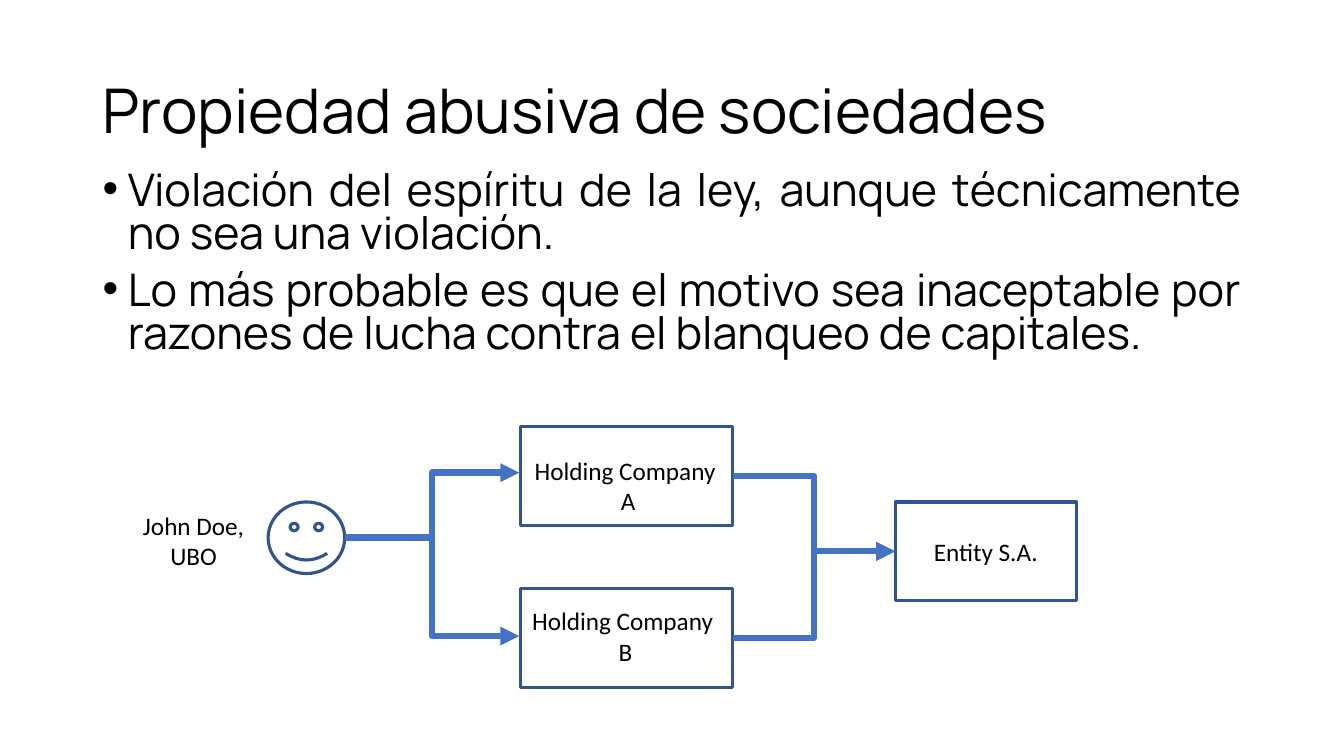
from lxml import etree
from pptx import Presentation
from pptx import util as u
from pptx.dml.color import RGBColor
from pptx.enum import shapes, text
from pptx.oxml import ns

BLACK = RGBColor(0x00, 0x00, 0x00)
OUTLINE = RGBColor(0x32, 0x54, 0x91)
ARROW = RGBColor(0x44, 0x72, 0xC4)

deck = Presentation()
deck.slide_width = u.Inches(13.33)
deck.slide_height = u.Inches(7.5)
page = deck.slides.add_slide(deck.slide_layouts[6])


def share(x, y):
    return int(deck.slide_width * x / 100), int(deck.slide_height * y / 100)


def add_text(left, top, width, height, lines, size, font, align, wrap=True):
    box = page.shapes.add_textbox(*share(left, top), *share(width, height))
    frame = box.text_frame
    frame.word_wrap = wrap
    for index, line in enumerate(lines):
        para = frame.paragraphs[0] if index == 0 else frame.add_paragraph()
        para.alignment = align
        span = para.add_run()
        span.text = line
        span.font.size = u.Pt(size)
        span.font.name = font
        span.font.color.rgb = BLACK
    return frame


title = add_text(6.9, 5.33, 86.25, 19.33, ["Propiedad abusiva de sociedades"],
                 44, "Manrope", text.PP_ALIGN.LEFT)
title.vertical_anchor = text.MSO_ANCHOR.MIDDLE
title.paragraphs[0].line_spacing = 0.9

points = [
    "Violación del espíritu de la ley, aunque técnicamente no sea una violación.",
    "Lo más probable es que el motivo sea inaceptable por razones de lucha "
    "contra el blanqueo de capitales.",
]
body = add_text(6.9, 22.13, 86.25, 33.87, points, 32, "Manrope", text.PP_ALIGN.JUSTIFY)
for para in body.paragraphs:
    para.line_spacing = 0.8
    para.space_before = u.Pt(10)
    settings = para._p.get_or_add_pPr()
    settings.set("marL", str(u.Inches(0.25)))
    settings.set("indent", str(u.Inches(-0.25)))
    etree.SubElement(settings, ns.qn("a:buFont")).set("typeface", "Arial")
    etree.SubElement(settings, ns.qn("a:buChar")).set("char", "•")

RECTANGLE = shapes.MSO_SHAPE.RECTANGLE
figures = [
    (RECTANGLE, 38.7, 56.4, 15.83, 13.07),
    (RECTANGLE, 38.7, 77.87, 15.83, 13.07),
    (RECTANGLE, 66.6, 66.4, 13.5, 13.07),
    (shapes.MSO_SHAPE.SMILEY_FACE, 19.95, 66.4, 5.7, 9.47),
]
for kind, left, top, width, height in figures:
    figure = page.shapes.add_shape(kind, *share(left, top), *share(width, height))
    figure.shadow.inherit = False
    figure.fill.background()
    figure.line.color.rgb = OUTLINE
    figure.line.width = u.Pt(2.25)

labels = [
    (38.93, 59.6, 15.6, 9.47, ["Holding Company ", "A"], False),
    (9.83, 66.8, 9.15, 9.47, ["John Doe,", "UBO"], False),
    (38.63, 79.47, 15.83, 9.47, ["Holding Company ", "B"], True),
    (68.7, 70.27, 9.3, 5.33, ["Entity S.A."], False),
]
for left, top, width, height, lines, wrap in labels:
    add_text(left, top, width, height, lines, 18, "Calibri", text.PP_ALIGN.CENTER, wrap)

owner, entity = (25.65, 71.13), (66.6, 72.93)
links = [
    ((54.53, 62.93), entity),
    (owner, (38.63, 84.13)),
    (owner, (38.63, 62.53)),
    ((54.53, 84.4), entity),
]
for start, end in links:
    link = page.shapes.add_connector(shapes.MSO_CONNECTOR.ELBOW, *share(*start), *share(*end))
    link.line.color.rgb = ARROW
    link.line.width = u.Pt(4.5)
    etree.SubElement(link.line._get_or_add_ln(), ns.qn("a:tailEnd")).set("type", "triangle")
    etree.SubElement(link._element.spPr, ns.qn("a:effectLst"))

deck.save("out.pptx")
